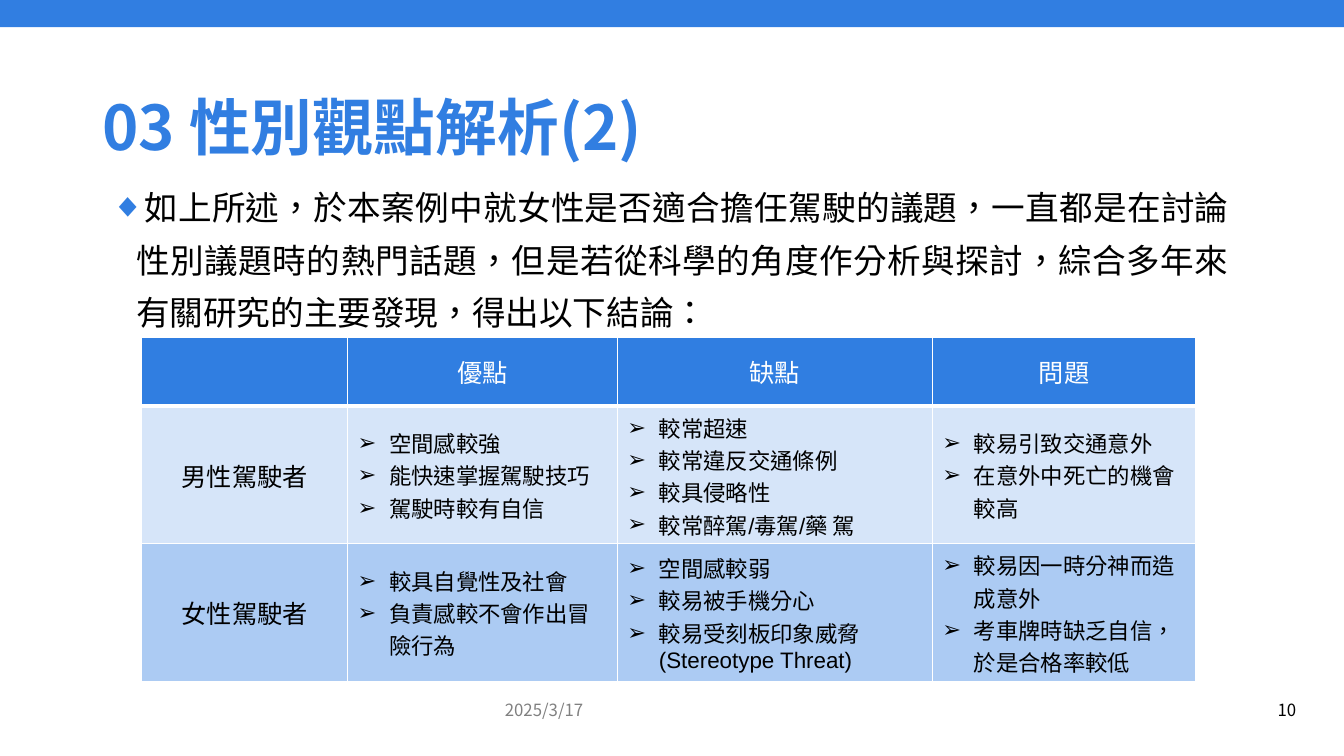
from lxml.etree import SubElement as Sub
from pptx import Presentation
from pptx.dml.color import RGBColor as RGB
from pptx.enum.shapes import MSO_SHAPE as Geo
from pptx.enum.text import MSO_ANCHOR as Anchor, PP_ALIGN as Align
from pptx.oxml.ns import qn
from pptx.util import Pt

SCALE = 9525
BLUE = RGB(0x31, 0x7E, 0xE1)
HEAD = RGB(0x30, 0x7E, 0xE1)
PALE = RGB(0xD6, 0xE5, 0xF9)
MID = RGB(0xAC, 0xCB, 0xF3)
GRAY = RGB(0x80, 0x80, 0x80)
BLACK = RGB(0, 0, 0)
WHITE = RGB(0xFF, 0xFF, 0xFF)
CJK = "Noto Sans CJK TC"

COLS = [196, 257, 300, 251]
ROWS = [66, 131, 131]
FILLS = [HEAD, PALE, MID]
CELLS = [
    ["", "優點", "缺點", "問題"],
    ["男性駕駛者",
     ["空間感較強", "能快速掌握駕駛技巧", "駕駛時較有自信"],
     ["較常超速", "較常違反交通條例", "較具侵略性", "較常醉駕/毒駕/藥 駕"],
     ["較易引致交通意外", "在意外中死亡的機會較高"]],
    ["女性駕駛者",
     ["較具自覺性及社會", "負責感較不會作出冒險行為"],
     ["空間感較弱", "較易被手機分心", "較易受刻板印象威脅 (Stereotype Threat)"],
     ["較易因一時分神而造成意外", "考車牌時缺乏自信，於是合格率較低"]],
]


def px(n):
    return n * SCALE


def put(obj, vals):
    for key, val in vals.items():
        setattr(obj, key, val)


class Page:
    def __init__(self, deck):
        self.slide = deck.slides.add_slide(deck.slide_layouts[1])
        self.shapes = self.slide.shapes

    def place(self, shape, box):
        put(shape, dict(zip(("left", "top", "width", "height"), map(px, box))))

    def mark(self, par, char, indent, color=None):
        """Give a paragraph a hanging bullet."""
        props = par._p.get_or_add_pPr()
        props.set("marL", str(px(indent)))
        props.set("indent", str(-px(indent)))
        if color is not None:
            Sub(Sub(props, qn("a:buClr")), qn("a:srgbClr"), val=str(color))
        Sub(props, qn("a:buFont"), typeface="Arial")
        Sub(props, qn("a:buChar"), char=char)

    def text(self, par, words, size, color=BLACK, face=CJK, bold=False, **form):
        run = par.add_run()
        run.text = words
        put(run.font, {"size": Pt(size), "name": face, "bold": bold})
        run.font.color.rgb = color
        props = run._r.get_or_add_rPr()
        props.set("lang", "zh-TW")
        Sub(props, qn("a:ea"), typeface=CJK)
        put(par, form)

    def bar(self, box, color):
        shape = self.shapes.add_shape(Geo.RECTANGLE, *map(px, box))
        shape.shadow.inherit = False
        shape.fill.solid()
        shape.fill.fore_color.rgb = color
        shape.line.fill.background()

    def title(self, box, words):
        shape = self.shapes.title
        self.place(shape, box)
        shape.text_frame.vertical_anchor = Anchor.MIDDLE
        self.text(shape.text_frame.paragraphs[0], words, 44, BLUE, bold=True,
                  alignment=Align.LEFT, line_spacing=0.9)

    def body(self, box, words):
        shape = self.slide.placeholders[1]
        self.place(shape, box)
        par = shape.text_frame.paragraphs[0]
        self.mark(par, "◆", 24, BLUE)
        self.text(par, words, 24, alignment=Align.JUSTIFY,
                  line_spacing=1.3, space_before=Pt(0))

    def label(self, box, words, color):
        frame = self.shapes.add_textbox(*map(px, box)).text_frame
        put(frame, {"word_wrap": True, "vertical_anchor": Anchor.MIDDLE})
        self.text(frame.paragraphs[0], words, 12, color, alignment=Align.RIGHT)

    def edge(self, cell, widths):
        """Draw white borders: left, right, top, bottom, in points."""
        props = cell._tc.get_or_add_tcPr()
        for spot, (side, width) in enumerate(zip("LRTB", widths)):
            line = Sub(props, qn("a:ln" + side), w=str(Pt(width)))
            Sub(Sub(line, qn("a:solidFill")), qn("a:srgbClr"), val=str(WHITE))
            props.insert(spot, line)

    def cell(self, cell, data, fill, color, widths):
        cell.vertical_anchor = Anchor.MIDDLE
        cell.fill.solid()
        cell.fill.fore_color.rgb = fill
        self.edge(cell, widths)
        frame = cell.text_frame
        if isinstance(data, str):
            if data:
                self.text(frame.paragraphs[0], data, 18, color,
                          alignment=Align.CENTER)
            return
        for i, words in enumerate(data):
            par = frame.add_paragraph() if i else frame.paragraphs[0]
            self.mark(par, "➢", 30)
            self.text(par, words, 16, color, "Arial")

    def table(self, left, top):
        grid = self.shapes.add_table(len(ROWS), len(COLS), px(left), px(top),
                                     px(sum(COLS)), px(sum(ROWS))).table
        for col, width in zip(grid.columns, COLS):
            col.width = px(width)
        for r, (row, high) in enumerate(zip(grid.rows, ROWS)):
            row.height = px(high)
            color = BLACK if r else WHITE
            widths = (1, 1, 3 if r == 1 else 1, 1 if r else 3)
            for cell, data in zip(row.cells, CELLS[r]):
                self.cell(cell, data, FILLS[r], color, widths)


def main():
    deck = Presentation()
    put(deck, {"slide_width": px(1280), "slide_height": px(720)})
    page = Page(deck)
    page.bar((0, 0, 1280, 26), BLUE)
    page.title((88, 71, 1104, 106), "03 性別觀點解析(2)")
    page.body((96, 162, 1084, 494),
              "如上所述，於本案例中就女性是否適合擔任駕駛的議題，一直都是在討論"
              "性別議題時的熱門話題，但是若從科學的角度作分析與探討，綜合多年來"
              "有關研究的主要發現，得出以下結論：")
    page.label((457, 657, 108, 38), "2025/3/17", GRAY)
    page.label((1181, 657, 63, 38), "10", BLACK)
    page.table(135, 321)
    deck.save("out.pptx")


if __name__ == "__main__":
    main()
